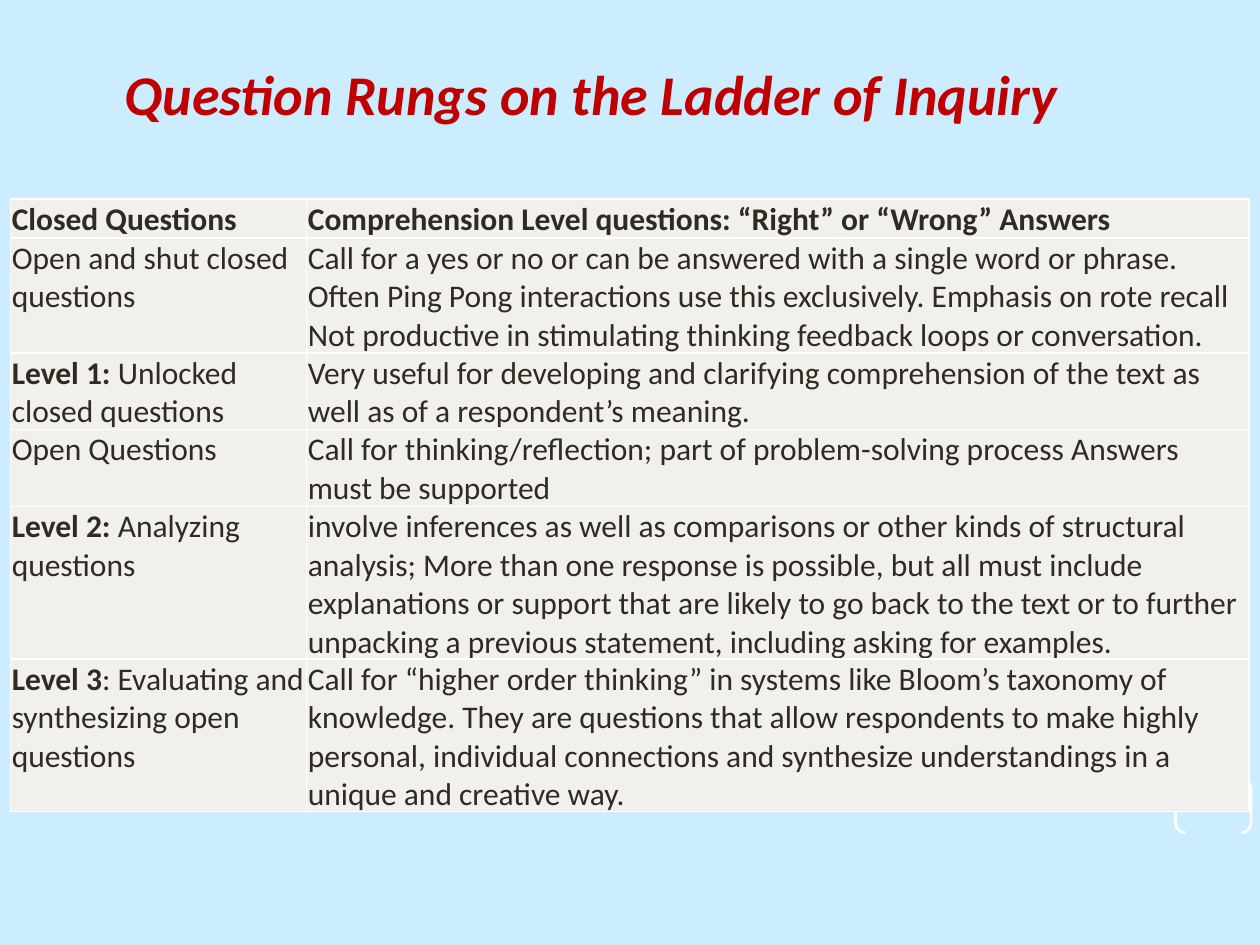
from dataclasses import dataclass

from lxml.etree import SubElement
from pptx import Presentation
from pptx.dml.color import RGBColor
from pptx.enum.shapes import MSO_SHAPE
from pptx.enum.text import MSO_ANCHOR, MSO_AUTO_SIZE, PP_ALIGN
from pptx.oxml.ns import qn
from pptx.slide import Slide
from pptx.table import _Cell
from pptx.text.text import _Run
from pptx.util import Pt

SKY = RGBColor(0xCC, 0xEC, 0xFF)
RED = RGBColor(0xC0, 0x00, 0x00)
INK = RGBColor(0x2F, 0x2B, 0x20)
PAPER = RGBColor(0xF1, 0xF0, 0xEC)
WHITE = RGBColor(0xFF, 0xFF, 0xFF)
FONT = "Calibri"
CELL_INSET = Pt(0.72)
COLUMN_WIDTHS = (169.2, 538.56)


@dataclass(frozen=True)
class Rung:
    height: float
    label: str
    name: str
    description: str
    heading: bool = False


RUNGS = (
    Rung(16, "Closed Questions", "",
         "Comprehension Level questions: “Right” or “Wrong” Answers", heading=True),
    Rung(60, "", "Open and shut closed questions",
         "Call for a yes or no or can be answered with a single word or phrase. "
         "Often Ping Pong interactions use this exclusively. Emphasis on rote recall "
         "Not productive in stimulating thinking feedback loops or conversation."),
    Rung(30, "Level 1: ", "Unlocked closed questions",
         "Very useful for developing and clarifying comprehension of the text as well "
         "as of a respondent’s meaning."),
    Rung(30, "", "Open Questions",
         "Call for thinking/reflection; part of problem-solving process Answers must "
         "be supported"),
    Rung(60, "Level 2: ", "Analyzing questions",
         "involve inferences as well as comparisons or other kinds of structural "
         "analysis; More than one response is possible, but all must include "
         "explanations or support that are likely to go back to the text or to further "
         "unpacking a previous statement, including asking for examples."),
    Rung(60, "Level 3", ": Evaluating and synthesizing open questions",
         "Call for “higher order thinking” in systems like Bloom’s taxonomy of "
         "knowledge. They are questions that allow respondents to make highly personal, "
         "individual connections and synthesize understandings in a unique and "
         "creative way."),
)


def format_run(run: _Run, size: float, color: RGBColor, bold: bool,
               italic: bool = False) -> None:
    run.font.name = FONT
    run.font.size = Pt(size)
    run.font.color.rgb = color
    run.font.bold = bold
    run.font.italic = italic


def add_borders(cell: _Cell) -> None:
    properties = cell._tc.get_or_add_tcPr()
    for index, side in enumerate(("a:lnL", "a:lnR", "a:lnT", "a:lnB")):
        border = SubElement(properties, qn(side), w=str(Pt(1)))
        fill = SubElement(border, qn("a:solidFill"))
        SubElement(fill, qn("a:srgbClr"), val=str(WHITE))
        properties.insert(index, border)


def fill_cell(cell: _Cell, bold_text: str, plain_text: str) -> None:
    cell.fill.solid()
    cell.fill.fore_color.rgb = PAPER
    cell.margin_left = cell.margin_top = cell.margin_right = CELL_INSET
    cell.margin_bottom = 0
    add_borders(cell)
    paragraph = cell.text_frame.paragraphs[0]
    for text, bold in ((bold_text, True), (plain_text, False)):
        if text:
            run = paragraph.add_run()
            run.text = text
            format_run(run, 18, INK, bold)


def add_bracket(slide: Slide) -> None:
    bracket = slide.shapes.add_shape(
        MSO_SHAPE.DOUBLE_BRACKET, Pt(671.76), Pt(444.96), Pt(43.2), Pt(30.96))
    bracket.adjustments[0] = 0.18
    bracket.shadow.inherit = False
    bracket.fill.background()
    bracket.line.color.rgb = WHITE
    bracket.line.width = Pt(1.5)


def add_ladder(slide: Slide) -> None:
    ladder = slide.shapes.add_table(
        len(RUNGS), len(COLUMN_WIDTHS), Pt(6), Pt(113.76),
        Pt(sum(COLUMN_WIDTHS)), Pt(sum(rung.height for rung in RUNGS))).table
    for column, width in zip(ladder.columns, COLUMN_WIDTHS):
        column.width = Pt(width)
    for index, rung in enumerate(RUNGS):
        ladder.rows[index].height = Pt(rung.height)
        fill_cell(ladder.cell(index, 0), rung.label, rung.name)
        description = (rung.description, "") if rung.heading else ("", rung.description)
        fill_cell(ladder.cell(index, 1), *description)


def set_title(slide: Slide) -> None:
    title = slide.shapes.title
    title.left, title.top, title.width, title.height = (
        Pt(64), Pt(30.24), Pt(553), Pt(46))
    frame = title.text_frame
    frame.text = "Question Rungs on the Ladder of Inquiry"
    frame.word_wrap = False
    frame.auto_size = MSO_AUTO_SIZE.SHAPE_TO_FIT_TEXT
    frame.vertical_anchor = MSO_ANCHOR.TOP
    paragraph = frame.paragraphs[0]
    paragraph.alignment = PP_ALIGN.LEFT
    format_run(paragraph.runs[0], 32, RED, bold=True, italic=True)


def main() -> None:
    deck = Presentation()
    deck.slide_width, deck.slide_height = Pt(720), Pt(540)
    slide = deck.slides.add_slide(deck.slide_layouts[5])
    slide.background.fill.solid()
    slide.background.fill.fore_color.rgb = SKY
    add_bracket(slide)
    add_ladder(slide)
    set_title(slide)
    deck.save("out.pptx")


if __name__ == "__main__":
    main()
